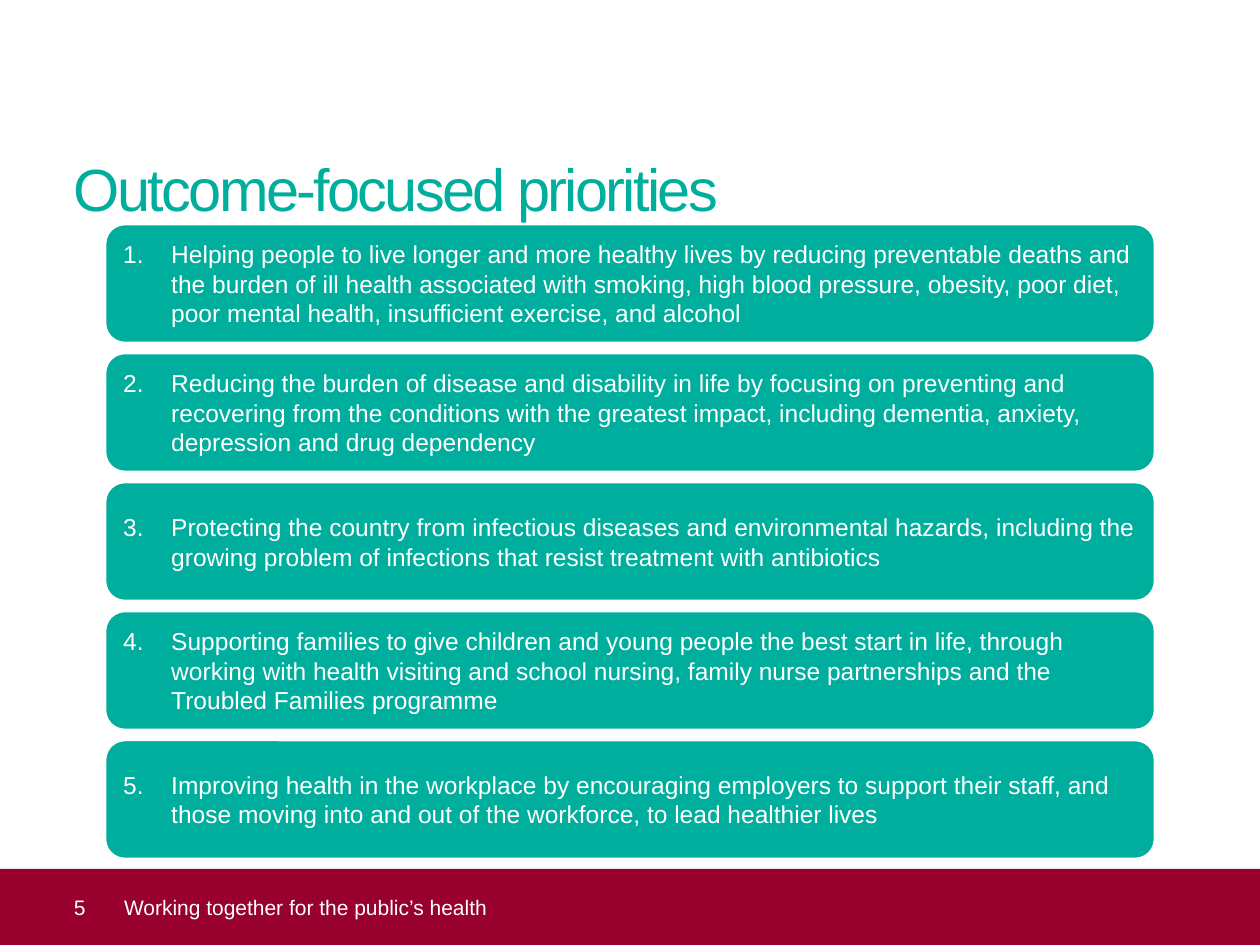
from lxml import etree
from pptx import Presentation
from pptx.dml.color import RGBColor
from pptx.enum.shapes import MSO_SHAPE
from pptx.enum.text import MSO_ANCHOR, PP_ALIGN
from pptx.oxml.ns import qn
from pptx.util import Emu, Pt

RECT, ROUND = MSO_SHAPE.RECTANGLE, MSO_SHAPE.ROUNDED_RECTANGLE
TOP, MIDDLE = MSO_ANCHOR.TOP, MSO_ANCHOR.MIDDLE
LEFT = PP_ALIGN.LEFT
SCALE = 914400 / 126
COLORS = {"teal": "00AE9E", "wine": "98002E", "white": "FFFFFF"}
GOALS = [
    "Helping people to live longer and more healthy lives by reducing preventable deaths and "
    "the burden of ill health associated with smoking, high blood pressure, obesity, poor diet, "
    "poor mental health, insufficient exercise, and alcohol",
    "Reducing the burden of disease and disability in life by focusing on preventing and "
    "recovering from the conditions with the greatest impact, including dementia, anxiety, "
    "depression and drug dependency",
    "Protecting the country from infectious diseases and environmental hazards, including the "
    "growing problem of infections that resist treatment with antibiotics",
    "Supporting families to give children and young people the best start in life, through "
    "working with health visiting and school nursing, family nurse partnerships and the "
    "Troubled Families programme",
    "Improving health in the workplace by encouraging employers to support their staff, and "
    "those moving into and out of the workforce, to lead healthier lives",
]


def px(count):
    return Emu(round(count * SCALE))


def tint(name):
    return RGBColor.from_string(COLORS[name])


def write(shape, text, size=12, color="white", anchor=MIDDLE, inset=None,
          indent=0, number=None, track=None, lead=None):
    frame = shape.text_frame
    frame.word_wrap = True
    frame.vertical_anchor = anchor
    if inset:
        (frame.margin_left, frame.margin_top,
         frame.margin_right, frame.margin_bottom) = map(px, inset)
    para = frame.paragraphs[0]
    para.alignment = LEFT
    if lead:
        para.line_spacing = lead
    props = para._p.get_or_add_pPr()
    props.set("marL", str(px(indent)))
    props.set("indent", str(-px(indent) if number else 0))
    if number:
        etree.SubElement(props, qn("a:buAutoNum"), type="arabicPeriod", startAt=str(number))
    run = para.add_run()
    run.text = text
    run.font.name = "Arial"
    run.font.size = Pt(size)
    run.font.color.rgb = tint(color)
    if track:
        run._r.get_or_add_rPr().set("spc", str(track))


class Deck:
    """Holds the style and the current slide."""

    def __init__(self, wide, high):
        self.show = Presentation()
        self.show.slide_width, self.show.slide_height = px(wide), px(high)
        self.slide = self.show.slides.add_slide(self.show.slide_layouts[6])

    def label(self, box, text, **form):
        shape = self.slide.shapes.add_textbox(*map(px, box))
        write(shape, text, inset=(0, 0, 0, 0), **form)

    def block(self, kind, box, fill, edge=None):
        shape = self.slide.shapes.add_shape(kind, *map(px, box))
        shape.shadow.inherit = False
        shape.fill.solid()
        shape.fill.fore_color.rgb = tint(fill)
        if edge:
            shape.line.color.rgb = tint(edge)
            shape.line.width = Pt(1.5)
        else:
            shape.line.fill.background()
        return shape

    def bar(self, box, text):
        shape = self.block(RECT, box, "wine")
        write(shape, text, inset=(0, 0, 13, 0), indent=74)

    def card(self, box, number, text):
        shape = self.block(ROUND, box, "teal", "white")
        shape.adjustments[0] = 0.167
        write(shape, text, size=14, indent=48, number=number)


def main():
    deck = Deck(1260, 945)
    deck.label((74, 145, 1106, 89), "Outcome-focused priorities",
               size=34, color="teal", anchor=TOP, track=-150, lead=1.1)
    deck.bar((0, 869, 1260, 76), "5")
    deck.label((124, 869, 1062, 76), "Working together for the public’s health")
    for row, goal in enumerate(GOALS):
        deck.card((105, 224 + 129 * row, 1050, 119), row + 1, goal)
    deck.show.save("out.pptx")


if __name__ == "__main__":
    main()
